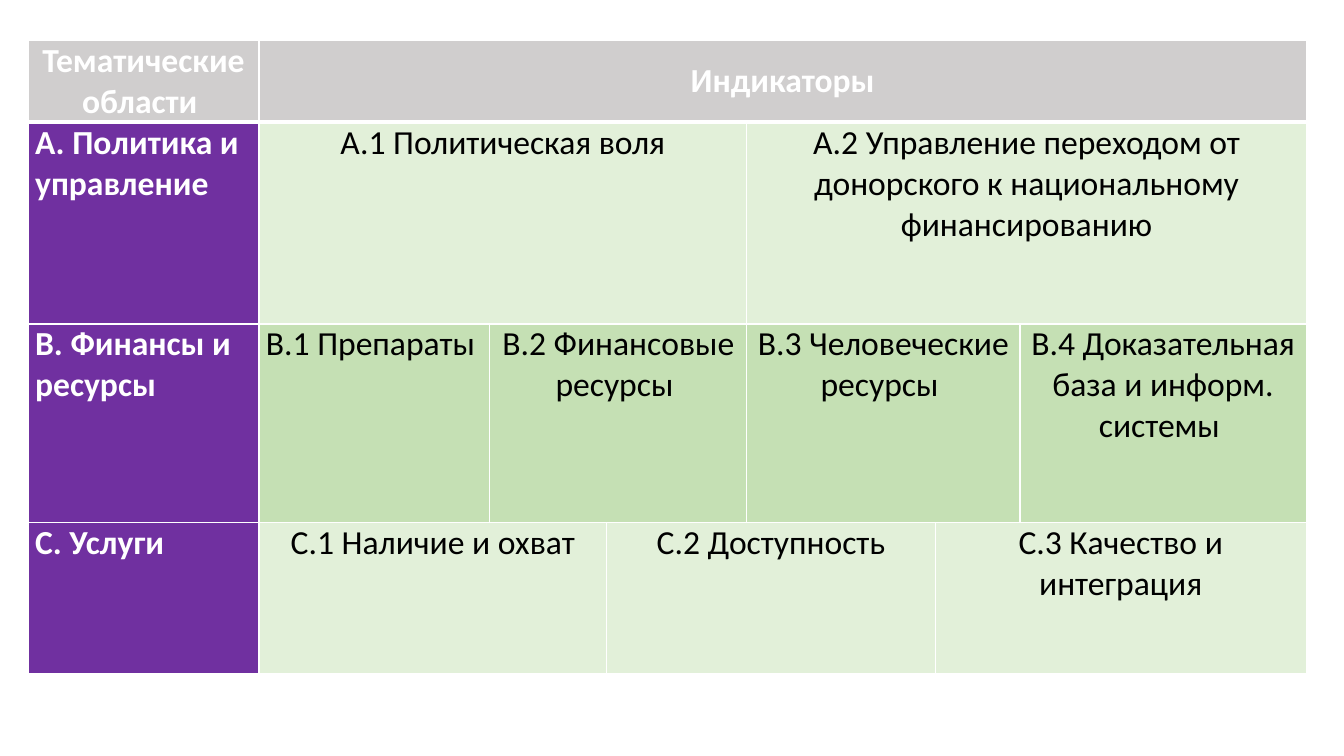
from dataclasses import dataclass

from lxml import etree
from pptx import Presentation
from pptx.dml.color import RGBColor
from pptx.enum.text import MSO_ANCHOR, PP_ALIGN
from pptx.oxml.ns import qn
from pptx.table import Table, _Cell
from pptx.util import Pt

LEFT, CENTER = PP_ALIGN.LEFT, PP_ALIGN.CENTER
TOP, MIDDLE = MSO_ANCHOR.TOP, MSO_ANCHOR.MIDDLE


@dataclass(frozen=True)
class Theme:
    font: str = "Calibri"
    size: float = 24
    white: str = "FFFFFF"
    black: str = "000000"
    header: str = "D0CECE"
    area: str = "7030A0"
    light: str = "E2F0D9"
    medium: str = "C5E0B4"
    thin: float = 1
    thick: float = 3


@dataclass(frozen=True)
class Entry:
    text: str
    span: int = 1
    align: PP_ALIGN = CENTER
    anchor: MSO_ANCHOR = TOP


@dataclass(frozen=True)
class Band:
    height: float
    area: Entry
    indicators: tuple[Entry, ...]
    area_fill: str
    indicator_fill: str
    indicator_color: str
    indicator_bold: bool = False
    top: float = 1
    bottom: float = 1


THEME = Theme()
TABLE_LEFT, TABLE_TOP = 20.1, 28.8
COLUMN_WIDTHS = (164.9, 164.9, 83.5, 100.1, 134.6, 60.5, 204.5)
CELL_FORMAT = {
    "margin_left": Pt(5),
    "margin_right": Pt(5),
    "margin_top": 0,
    "margin_bottom": 0,
}
BANDS = (
    Band(57.6, Entry("Тематические области "),
         (Entry("Индикаторы", 6, anchor=MIDDLE),),
         THEME.header, THEME.header, THEME.white, True, bottom=THEME.thick),
    Band(144, Entry("A. Политика и управление", align=LEFT),
         (Entry("А.1 Политическая воля", 3),
          Entry("А.2 Управление переходом от донорского к национальному финансированию", 3)),
         THEME.area, THEME.light, THEME.black, top=THEME.thick),
    Band(142, Entry("B. Финансы и ресурсы", align=LEFT),
         (Entry("В.1 Препараты", align=LEFT),
          Entry("В.2 Финансовые ресурсы ", 2),
          Entry("В.3 Человеческие ресурсы ", 2),
          Entry("В.4 Доказательная база и информ. системы ")),
         THEME.area, THEME.medium, THEME.black),
    Band(108, Entry("C. Услуги", align=LEFT),
         (Entry("С.1 Наличие и охват", 2),
          Entry("С.2 Доступность", 2),
          Entry("С.3 Качество и интеграция", 2)),
         THEME.area, THEME.light, THEME.black),
)


def set_borders(cell: _Cell, top: float, bottom: float) -> None:
    properties = cell._tc.get_or_add_tcPr()
    widths = {"a:lnL": THEME.thin, "a:lnR": THEME.thin, "a:lnT": top, "a:lnB": bottom}
    for side, width in widths.items():
        border = etree.SubElement(properties, qn(side), w=str(Pt(width)))
        fill = etree.SubElement(border, qn("a:solidFill"))
        etree.SubElement(fill, qn("a:srgbClr"), val=THEME.white)


def write_entry(cell: _Cell, entry: Entry, color: str, bold: bool) -> None:
    cell.text = entry.text
    cell.vertical_anchor = entry.anchor
    paragraph = cell.text_frame.paragraphs[0]
    paragraph.alignment = entry.align
    font = paragraph.runs[0].font
    text_format = {"name": THEME.font, "size": Pt(THEME.size), "bold": bold}
    for attribute, value in text_format.items():
        setattr(font, attribute, value)
    font.color.rgb = RGBColor.from_string(color)


def draw_entry(table: Table, row: int, column: int, entry: Entry, band: Band) -> None:
    is_area = column == 0
    fill = band.area_fill if is_area else band.indicator_fill
    for covered in range(column, column + entry.span):
        cell = table.cell(row, covered)
        for attribute, value in CELL_FORMAT.items():
            setattr(cell, attribute, value)
        set_borders(cell, band.top, band.bottom)
        cell.fill.solid()
        cell.fill.fore_color.rgb = RGBColor.from_string(fill)
    first = table.cell(row, column)
    if entry.span > 1:
        first.merge(table.cell(row, column + entry.span - 1))
    color = THEME.white if is_area else band.indicator_color
    write_entry(first, entry, color, is_area or band.indicator_bold)


def draw_band(table: Table, row: int, band: Band) -> None:
    table.rows[row].height = Pt(band.height)
    column = 0
    for entry in (band.area, *band.indicators):
        draw_entry(table, row, column, entry, band)
        column += entry.span


def main() -> None:
    presentation = Presentation()
    presentation.slide_width, presentation.slide_height = Pt(960), Pt(540)
    slide = presentation.slides.add_slide(presentation.slide_layouts[6])
    indicators = slide.shapes.add_table(
        len(BANDS), len(COLUMN_WIDTHS), Pt(TABLE_LEFT), Pt(TABLE_TOP),
        Pt(sum(COLUMN_WIDTHS)), Pt(sum(band.height for band in BANDS)),
    ).table
    for column, width in zip(indicators.columns, COLUMN_WIDTHS):
        column.width = Pt(width)
    for row, band in enumerate(BANDS):
        draw_band(indicators, row, band)
    presentation.save("out.pptx")


if __name__ == "__main__":
    main()
